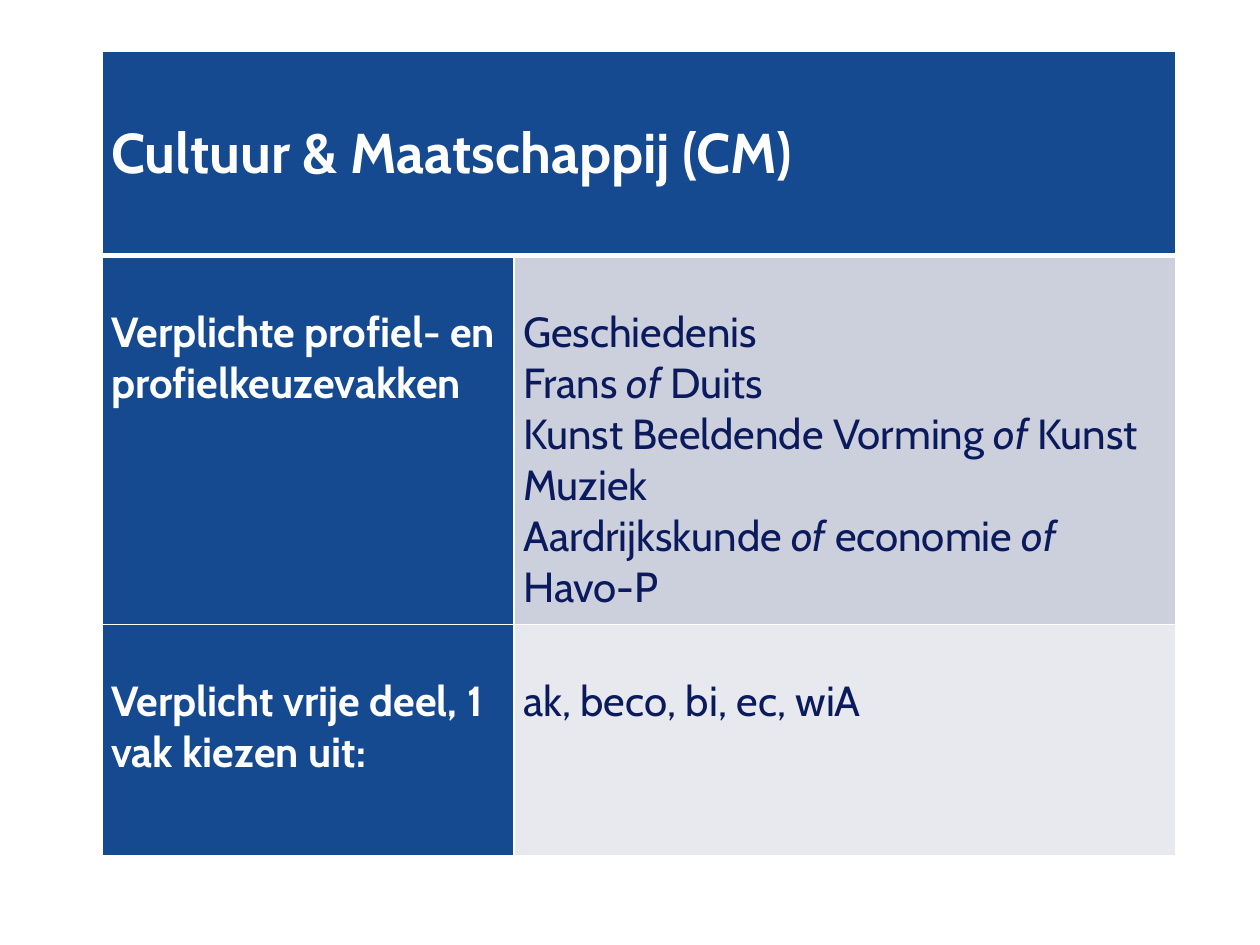
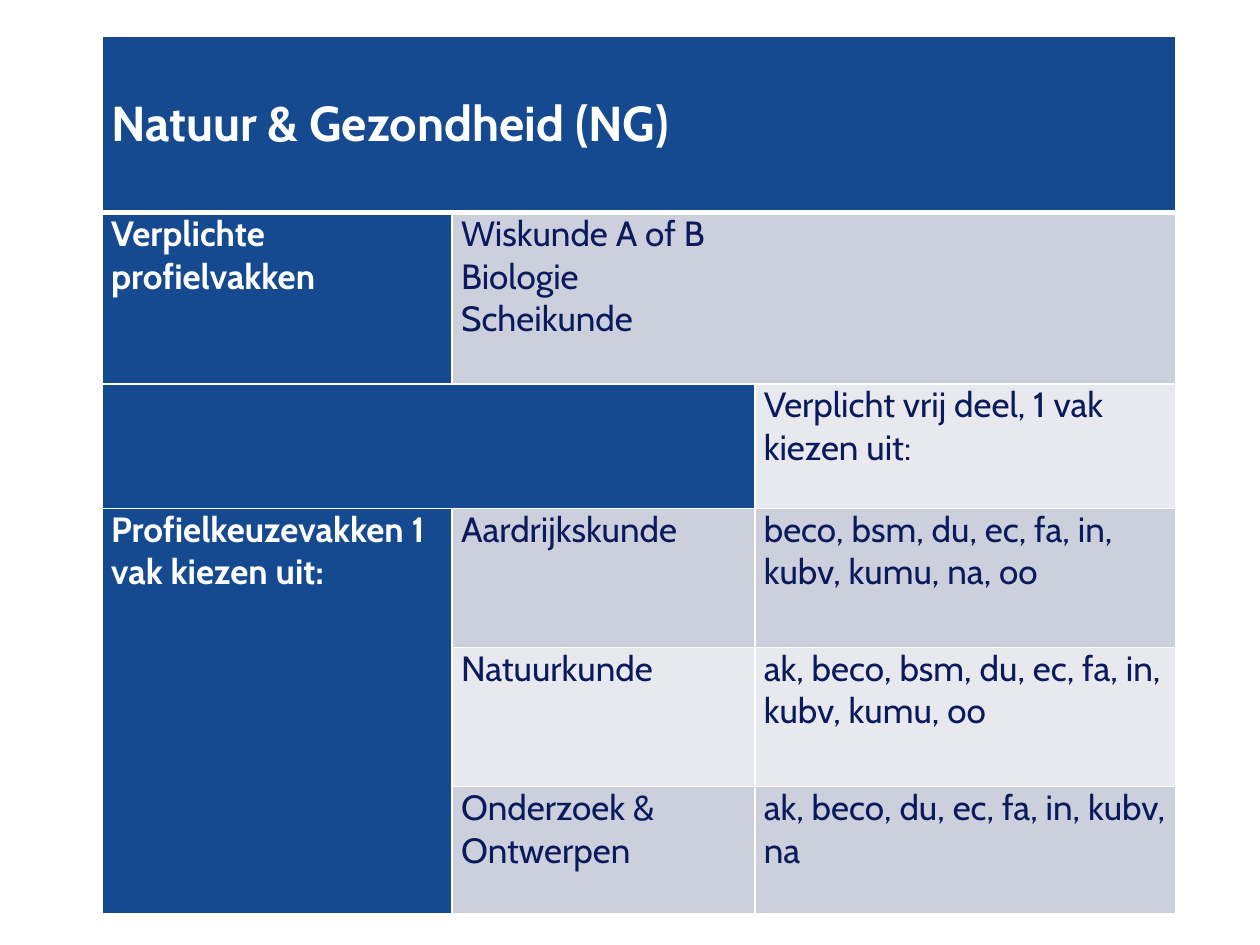
import pptx
import pptx.dml.color
import pptx.enum.text
import pptx.oxml
import pptx.oxml.ns
import pptx.util

Pt = pptx.util.Pt
RGBColor = pptx.dml.color.RGBColor
ANCHOR = pptx.enum.text.MSO_ANCHOR

# Each cell is a list of paragraphs; *stars* mark italics.
# A merge is (first row, first column, last row, last column).
PROFILES = [
    {
        "top": 29.5, "columns": [235.5, 378], "rows": [116.5, 211, 132],
        "title_size": 32, "size": 24, "text_top": 29.2,
        "merges": [(0, 0, 0, 1)],
        "cells": [
            [["Cultuur & Maatschappij (CM)"], []],
            [["Verplichte profiel- en profielkeuzevakken"],
             ["Geschiedenis",
              "Frans *of* Duits",
              "Kunst Beeldende Vorming *of* Kunst Muziek",
              "Aardrijkskunde *of* economie *of* Havo-P"]],
            [["Verplicht vrije deel, 1 vak kiezen uit:"],
             ["ak, beco, bi, ec, wiA"]],
        ],
    },
    {
        "top": 20.5, "columns": [200, 173, 240.5],
        "rows": [101, 98, 71, 79.5, 79.5, 72.5],
        "title_size": 28, "size": 20, "text_top": 0,
        "merges": [(0, 0, 0, 2), (1, 1, 1, 2), (2, 0, 2, 1), (3, 0, 5, 0)],
        "cells": [
            [["Natuur & Gezondheid (NG)"], [], []],
            [["Verplichte profielvakken"],
             ["Wiskunde A of B", "Biologie", "Scheikunde"], []],
            [[], [], ["Verplicht vrij deel, 1 vak kiezen uit:"]],
            [["Profielkeuzevakken 1 vak kiezen uit:"], ["Aardrijkskunde"],
             ["beco, bsm, du, ec, fa, in, kubv, kumu, na, oo"]],
            [[], ["Natuurkunde"],
             ["ak, beco, bsm, du, ec, fa, in, kubv, kumu, oo"]],
            [[], ["Onderzoek & Ontwerpen"],
             ["ak, beco, du, ec, fa, in, kubv, na"]],
        ],
    },
]

FONT = "Cabin"
WHITE = RGBColor(0xFF, 0xFF, 0xFF)
NAVY = RGBColor(0x0A, 0x1A, 0x5C)
BLUE = RGBColor(0x15, 0x4A, 0x91)
BANDS = [RGBColor(0xE8, 0xE9, 0xEE), RGBColor(0xCC, 0xD0, 0xDC)]
TABLE_LEFT = 58.3
CELL_MARGIN = 5.2
THIN, THICK = 1, 3


def add_borders(cell, row):
    """White lines all round, thick between the title row and the rest."""
    widths = {"L": THIN, "R": THIN,
              "T": THICK if row == 1 else THIN,
              "B": THICK if row == 0 else THIN}
    tcPr = cell._tc.get_or_add_tcPr()
    for side, width in widths.items():
        tcPr.append(pptx.oxml.parse_xml(
            f'<a:ln{side} {pptx.oxml.ns.nsdecls("a")} w="{Pt(width)}">'
            f'<a:solidFill><a:srgbClr val="{WHITE}"/></a:solidFill></a:ln{side}>'))


def write_paragraphs(tf, texts, size, bold, color):
    for i, text in enumerate(texts):
        p = tf.paragraphs[0] if i == 0 else tf.add_paragraph()
        p.font.name = FONT
        p.font.size = Pt(size)
        p.font.bold = bold
        p.font.color.rgb = color
        for j, part in enumerate(text.split("*")):
            r = p.add_run()
            r.text = part
            if j % 2:
                r.font.italic = True


def add_profile_table(s, profile):
    columns, rows = profile["columns"], profile["rows"]
    table = s.shapes.add_table(
        len(rows), len(columns), Pt(TABLE_LEFT), Pt(profile["top"]),
        Pt(sum(columns)), Pt(sum(rows))).table
    table.first_row = table.horz_banding = False
    for column, width in zip(table.columns, columns):
        column.width = Pt(width)
    for row, height in zip(table.rows, rows):
        row.height = Pt(height)

    for i, row_cells in enumerate(profile["cells"]):
        for j, texts in enumerate(row_cells):
            cell = table.cell(i, j)
            is_title = i == 0
            is_heading = is_title or j == 0
            cell.margin_left = cell.margin_right = Pt(CELL_MARGIN)
            cell.margin_top = Pt(0 if is_title else profile["text_top"])
            cell.margin_bottom = 0
            cell.vertical_anchor = ANCHOR.MIDDLE if is_title else ANCHOR.TOP
            add_borders(cell, i)
            cell.fill.solid()
            cell.fill.fore_color.rgb = BLUE if is_heading else BANDS[i % 2]
            write_paragraphs(
                cell.text_frame, texts,
                profile["title_size"] if is_title else profile["size"],
                is_heading, WHITE if is_heading else NAVY)

    for top, left, bottom, right in profile["merges"]:
        table.cell(top, left).merge(table.cell(bottom, right))


def main():
    prs = pptx.Presentation()
    prs.slide_width, prs.slide_height = Pt(720), Pt(540)
    for profile in PROFILES:
        s = prs.slides.add_slide(prs.slide_layouts[6])
        add_profile_table(s, profile)
    prs.save("out.pptx")


if __name__ == "__main__":
    main()
